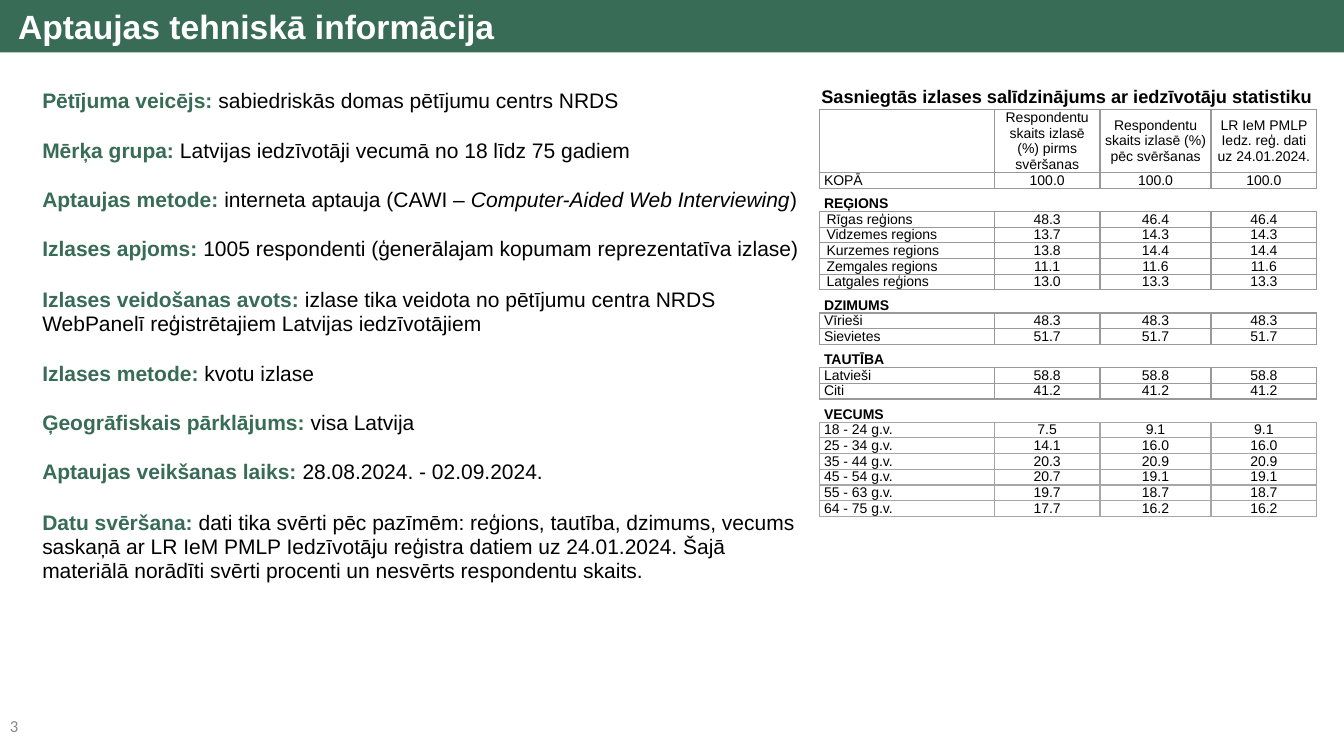
import dataclasses

import pptx
import pptx.dml.color
import pptx.enum.text
import pptx.oxml.ns
import pptx.util
from lxml import etree

Pt = pptx.util.Pt
ALIGN = pptx.enum.text.PP_ALIGN
ANCHOR = pptx.enum.text.MSO_ANCHOR
qn = pptx.oxml.ns.qn


@dataclasses.dataclass(frozen=True)
class Theme:
    font: str = "Arial"
    number_font: str = "Calibri"
    green: str = "386C57"
    black: str = "000000"
    white: str = "FFFFFF"
    grey: str = "898989"
    border: str = "999999"
    age_border: str = "A6A6A6"
    title: float = 24
    body: float = 15
    heading: float = 13
    number: float = 12
    table: float = 10


THEME = Theme()

# Survey facts: label, plain text, optional italic text and its ending
FACTS = [
    ("Pētījuma veicējs:", " sabiedriskās domas pētījumu centrs NRDS"),
    ("Mērķa grupa:", " Latvijas iedzīvotāji vecumā no 18 līdz 75 gadiem"),
    ("Aptaujas metode:", " interneta aptauja (CAWI – ", "Computer-Aided Web Interviewing", ")"),
    ("Izlases apjoms:", " 1005 respondenti (ģenerālajam kopumam reprezentatīva izlase)"),
    ("Izlases veidošanas avots:", " izlase tika veidota no pētījumu centra NRDS "
     "WebPanelī reģistrētajiem Latvijas iedzīvotājiem"),
    ("Izlases metode:", " kvotu izlase"),
    ("Ģeogrāfiskais pārklājums:", " visa Latvija"),
    ("Aptaujas veikšanas laiks:", " 28.08.2024. - 02.09.2024."),
    ("Datu svēršana:", " dati tika svērti pēc pazīmēm: reģions, tautība, dzimums, vecums "
     "saskaņā ar LR IeM PMLP Iedzīvotāju reģistra datiem uz 24.01.2024. Šajā "
     "materiālā norādīti svērti procenti un nesvērts respondentu skaits."),
]
LONG_FACTS = ("Izlases veidošanas avots:", "Datu svēršana:")

# Sample table: one-item rows are section headings
SAMPLE = [
    ("", "Respondentu skaits izlasē (%) pirms svēršanas",
     "Respondentu skaits izlasē (%) pēc svēršanas", "LR IeM PMLP Iedz. reģ. dati uz 24.01.2024."),
    ("KOPĀ", "100.0", "100.0", "100.0"),
    ("REĢIONS",),
    ("Rīgas reģions", "48.3", "46.4", "46.4"),
    ("Vidzemes regions", "13.7", "14.3", "14.3"),
    ("Kurzemes regions", "13.8", "14.4", "14.4"),
    ("Zemgales regions", "11.1", "11.6", "11.6"),
    ("Latgales reģions", "13.0", "13.3", "13.3"),
    ("DZIMUMS",),
    ("Vīrieši", "48.3", "48.3", "48.3"),
    ("Sievietes", "51.7", "51.7", "51.7"),
    ("TAUTĪBA",),
    ("Latvieši", "58.8", "58.8", "58.8"),
    ("Citi", "41.2", "41.2", "41.2"),
    ("VECUMS",),
    ("18 - 24 g.v.", "7.5", "9.1", "9.1"),
    ("25 - 34 g.v.", "14.1", "16.0", "16.0"),
    ("35 - 44 g.v.", "20.3", "20.9", "20.9"),
    ("45 - 54 g.v.", "20.7", "19.1", "19.1"),
    ("55 - 63 g.v.", "19.7", "18.7", "18.7"),
    ("64 - 75 g.v.", "17.7", "16.2", "16.2"),
]
COLUMNS = (125, 75.6, 79.2, 75.6)
HEADER_HEIGHT, SECTION_HEIGHT, ROW_HEIGHT = 45, 16.6, 11.2


def rgb(value):
    return pptx.dml.color.RGBColor.from_string(value)


def add_text(p, text, size, color=THEME.black, font=THEME.font, bold=False, italic=False):
    r = p.add_run()
    r.text = text
    r.font.name, r.font.size = font, Pt(size)
    r.font.bold, r.font.italic = bold, italic
    r.font.color.rgb = rgb(color)


def place(sp, left, top, width, height):
    sp.left, sp.top, sp.width, sp.height = Pt(left), Pt(top), Pt(width), Pt(height)


def add_box(slide, frame, text, align=ALIGN.LEFT, **style):
    sp = slide.shapes.add_textbox(*map(Pt, frame))
    sp.text_frame.word_wrap = True
    p = sp.text_frame.paragraphs[0]
    p.alignment = align
    add_text(p, text, **style)


def fill_title(sp, text):
    place(sp, 0, 0, 960, 37.4)
    sp.fill.solid()
    sp.fill.fore_color.rgb = rgb(THEME.green)
    tf = sp.text_frame
    tf.auto_size = pptx.enum.text.MSO_AUTO_SIZE.NONE
    tf.vertical_anchor = ANCHOR.MIDDLE
    tf.margin_left = Pt(13)
    p = tf.paragraphs[0]
    p.alignment = ALIGN.LEFT
    add_text(p, text, THEME.title, color=THEME.white, bold=True)


def fill_facts(sp, facts):
    place(sp, 23, 62, 562, 392)
    tf = sp.text_frame
    tf.auto_size = pptx.enum.text.MSO_AUTO_SIZE.NONE
    tf.vertical_anchor = ANCHOR.TOP
    for i, (label, plain, *rest) in enumerate(facts):
        p = tf.add_paragraph() if i else tf.paragraphs[0]
        p.line_spacing = 0.95 if label in LONG_FACTS else 0.85
        p.space_before = Pt(19.8)
        pPr = p._p.get_or_add_pPr()
        pPr.set("marL", "0")
        pPr.set("indent", "0")
        etree.SubElement(pPr, qn("a:buNone"))
        add_text(p, label, THEME.body, color=THEME.green, bold=True)
        add_text(p, plain, THEME.body)
        for text, italic in zip(rest, (True, False)):
            add_text(p, text, THEME.body, italic=italic)


def set_borders(cell, color, sides):
    tcPr = cell._tc.get_or_add_tcPr()
    for i, side in enumerate("LRTB"):
        ln = etree.Element(qn("a:ln" + side), w=str(Pt(1)))
        if side in sides:
            solid = etree.SubElement(ln, qn("a:solidFill"))
            etree.SubElement(solid, qn("a:srgbClr"), val=color)
        else:
            etree.SubElement(ln, qn("a:noFill"))
        tcPr.insert(i, ln)


def fill_cell(cell, text, align, inset, section, color):
    cell.fill.background()
    cell.margin_left = cell.margin_right = Pt(inset)
    cell.margin_top = cell.margin_bottom = 0
    cell.vertical_anchor = ANCHOR.BOTTOM if section else ANCHOR.MIDDLE
    p = cell.text_frame.paragraphs[0]
    p.alignment = align
    if text:
        add_text(p, text, THEME.table, bold=section)
    else:
        # Empty cells keep the table's type size so that rows stay low
        end = etree.SubElement(p._p, qn("a:endParaRPr"))
        end.set("sz", str(THEME.table * 100))
    set_borders(cell, color, "TB" if section else "LRTB")


def add_sample_table(slide, rows):
    heights = [SECTION_HEIGHT if len(row) == 1 else ROW_HEIGHT for row in rows]
    heights[0] = HEADER_HEIGHT
    frame = slide.shapes.add_table(len(rows), len(COLUMNS), Pt(585.2), Pt(78.3),
                                   Pt(sum(COLUMNS)), Pt(sum(heights)))
    table = frame.table
    table.first_row = table.horz_banding = False
    for column, width in zip(table.columns, COLUMNS):
        column.width = Pt(width)
    group = ""
    for i, row in enumerate(rows):
        table.rows[i].height = Pt(heights[i])
        section = len(row) == 1
        group = row[0] if section else group
        color = THEME.age_border if group == "VECUMS" and not section else THEME.border
        for j in range(len(COLUMNS)):
            text = row[j] if j < len(row) else ""
            wide = group and not section and (j or group == "REĢIONS")
            fill_cell(table.cell(i, j), text, ALIGN.CENTER if j else ALIGN.LEFT,
                      5.2 if wide else 3.4, section, color)


def main():
    prs = pptx.Presentation()
    prs.slide_width, prs.slide_height = Pt(960), Pt(540)
    slide = prs.slides.add_slide(prs.slide_layouts[1])

    # Title bar and survey facts
    fill_title(slide.shapes.title, "Aptaujas tehniskā informācija")
    fill_facts(slide.placeholders[1], FACTS)

    # Sample comparison
    add_sample_table(slide, SAMPLE)
    add_box(slide, (564.5, 57.6, 394.5, 23),
            "Sasniegtās izlases salīdzinājums ar iedzīvotāju statistiku",
            align=ALIGN.CENTER, size=THEME.heading, bold=True)

    # Slide number
    add_box(slide, (0, 508, 106.5, 28), "3", size=THEME.number,
            color=THEME.grey, font=THEME.number_font)
    prs.save("out.pptx")


if __name__ == "__main__":
    main()
